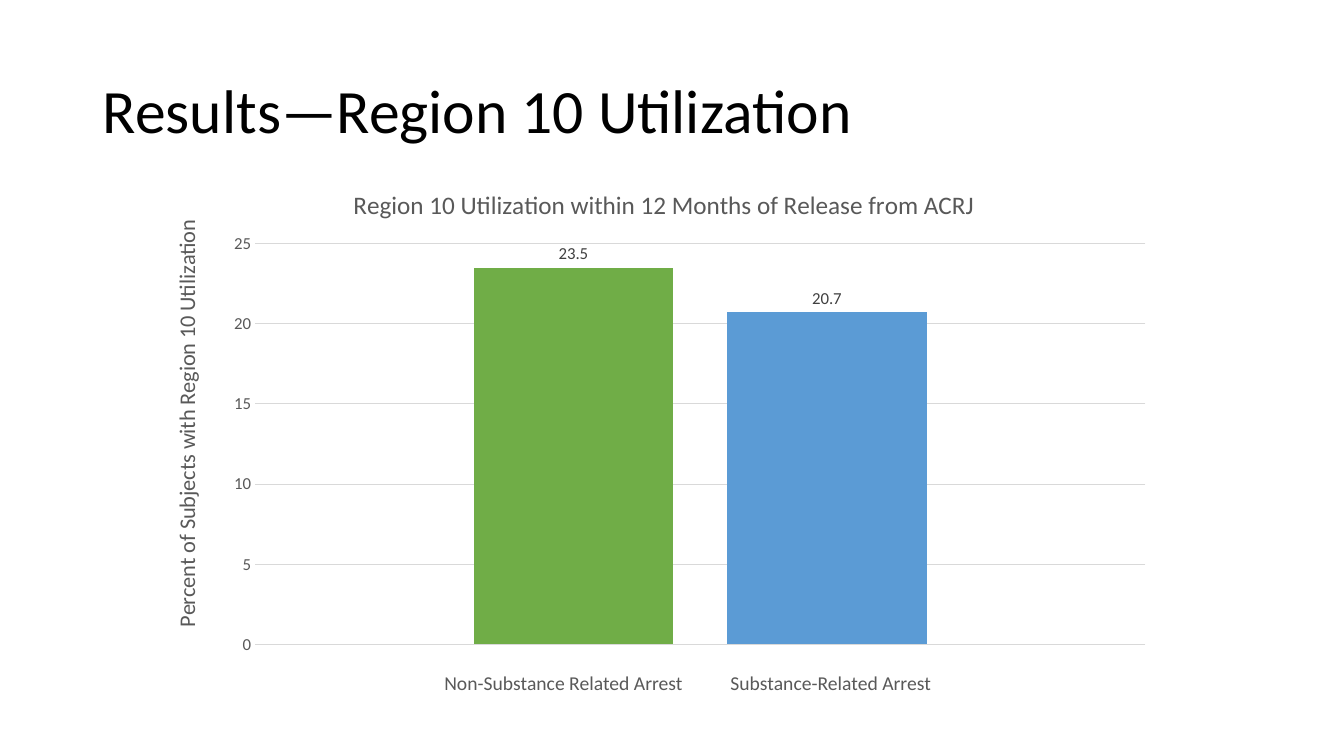
from dataclasses import dataclass

import lxml.etree
import pptx
import pptx.chart.data
import pptx.dml.color
import pptx.enum.chart
import pptx.enum.text
import pptx.oxml.ns
import pptx.util

FONT = "Calibri"
COLOURS = {
    "title": "000000",
    "chart_text": "595959",
    "label": "404040",
    "grid": "D9D9D9",
    "green": "70AD47",
    "blue": "5B9BD5",
}


@dataclass
class ArrestGroup:
    name: str
    percent: float
    colour: str
    caption_centre: float


GROUPS = [
    ArrestGroup("Non-Substance Related Arrest", 23.5, "green", 5.59),
    ArrestGroup("Substance-Related Arrest", 20.7, "blue", 8.24),
]


def rgb(name: str) -> pptx.dml.color.RGBColor:
    return pptx.dml.color.RGBColor.from_string(COLOURS[name])


def apply(target, **values) -> None:
    for name, value in values.items():
        setattr(target, name, value)


def format_font(font, size: float, colour: str) -> None:
    apply(font, name=FONT, size=pptx.util.Pt(size), bold=False)
    font.color.rgb = rgb(colour)


def place(shape, left: float, top: float, width: float, height: float) -> None:
    lengths = dict(left=left, top=top, width=width, height=height)
    apply(shape, **{name: pptx.util.Inches(value) for name, value in lengths.items()})


def set_layout(element, index: int, **fractions: float) -> None:
    """Fix a chart part's place, in fractions of the chart's size."""
    qn = pptx.oxml.ns.qn
    for old in element.findall(qn("c:layout")):
        element.remove(old)
    layout = lxml.etree.Element(qn("c:layout"))
    manual = lxml.etree.SubElement(layout, qn("c:manualLayout"))
    settings = {"xMode": "edge", "yMode": "edge", **fractions}
    if "w" in fractions:
        settings = {"layoutTarget": "inner", **settings}
    for name, value in settings.items():
        lxml.etree.SubElement(manual, qn(f"c:{name}")).set("val", str(value))
    element.insert(index, layout)


def write_chart_title(title, text: str, size: float, x: float, y: float) -> None:
    span = title.text_frame.paragraphs[0].add_run()
    span.text = text
    format_font(span.font, size, "chart_text")
    set_layout(title._element, 1, x=x, y=y)


def add_title(page) -> None:
    title = page.shapes.title
    place(title, 0.92, 0.4, 11.5, 1.45)
    title.text_frame.text = "Results—Region 10 Utilization"
    apply(title.text_frame, vertical_anchor=pptx.enum.text.MSO_ANCHOR.MIDDLE, word_wrap=True)
    para = title.text_frame.paragraphs[0]
    apply(para, alignment=pptx.enum.text.PP_ALIGN.LEFT, line_spacing=0.9)
    format_font(para.runs[0].font, 44, "title")


def add_utilization_chart(page) -> None:
    data = pptx.chart.data.CategoryChartData()
    data.categories = ["1"]
    for number, group in enumerate(GROUPS, start=1):
        data.add_series(f"Series {number}", [group.percent])
    frame = page.shapes.add_chart(
        pptx.enum.chart.XL_CHART_TYPE.COLUMN_CLUSTERED,
        *map(pptx.util.Inches, (1.56, 1.59, 10, 5.51)),
        data,
    )
    chart = frame.chart
    apply(chart, has_legend=False, has_title=True)
    format_font(chart.font, 10, "title")
    write_chart_title(
        chart.chart_title,
        "Region 10 Utilization within 12 Months of Release from ACRJ",
        18, 0.19, 0.04,
    )

    chart.category_axis.visible = False
    axis = chart.value_axis
    no_tick = pptx.enum.chart.XL_TICK_MARK.NONE
    apply(axis, minimum_scale=0, maximum_scale=25, major_unit=5, has_title=True,
          has_major_gridlines=True, major_tick_mark=no_tick, minor_tick_mark=no_tick)
    axis.format.line.fill.background()
    grid_line = axis.major_gridlines.format.line
    grid_line.width = pptx.util.Pt(0.75)
    grid_line.color.rgb = rgb("grid")
    format_font(axis.tick_labels.font, 12, "chart_text")
    write_chart_title(
        axis.axis_title, "Percent of Subjects with Region 10 Utilization", 16, 0.01, 0.1
    )
    body = axis.axis_title.text_frame._txBody.bodyPr
    body.set("rot", "-5400000")
    body.set("vert", "horz")

    plot = chart.plots[0]
    apply(plot, gap_width=219, overlap=-27, vary_by_categories=False)
    for series, group in zip(plot.series, GROUPS):
        series.format.fill.solid()
        series.format.fill.fore_color.rgb = rgb(group.colour)
        labels = series.data_labels
        apply(labels, show_value=True,
              position=pptx.enum.chart.XL_LABEL_POSITION.OUTSIDE_END)
        format_font(labels.font, 12, "label")
    plot_area = chart._chartSpace.chart.plotArea
    set_layout(plot_area, 0, x=0.097, y=0.15, w=0.883, h=0.722)


def add_caption(page, group: ArrestGroup) -> None:
    width, height = 2.6, 0.34
    box = page.shapes.add_textbox(0, 0, 0, 0)
    place(box, group.caption_centre - width / 2, 6.6, width, height)
    apply(box.text_frame, word_wrap=True,
          vertical_anchor=pptx.enum.text.MSO_ANCHOR.MIDDLE)
    para = box.text_frame.paragraphs[0]
    para.alignment = pptx.enum.text.PP_ALIGN.CENTER
    span = para.add_run()
    span.text = group.name
    format_font(span.font, 14, "chart_text")


def main() -> None:
    deck = pptx.Presentation()
    apply(deck, slide_width=pptx.util.Inches(13.33), slide_height=pptx.util.Inches(7.5))
    page = deck.slides.add_slide(deck.slide_layouts.get_by_name("Title Only"))
    add_title(page)
    add_utilization_chart(page)
    for group in GROUPS:
        add_caption(page, group)
    deck.save("out.pptx")


if __name__ == "__main__":
    main()
